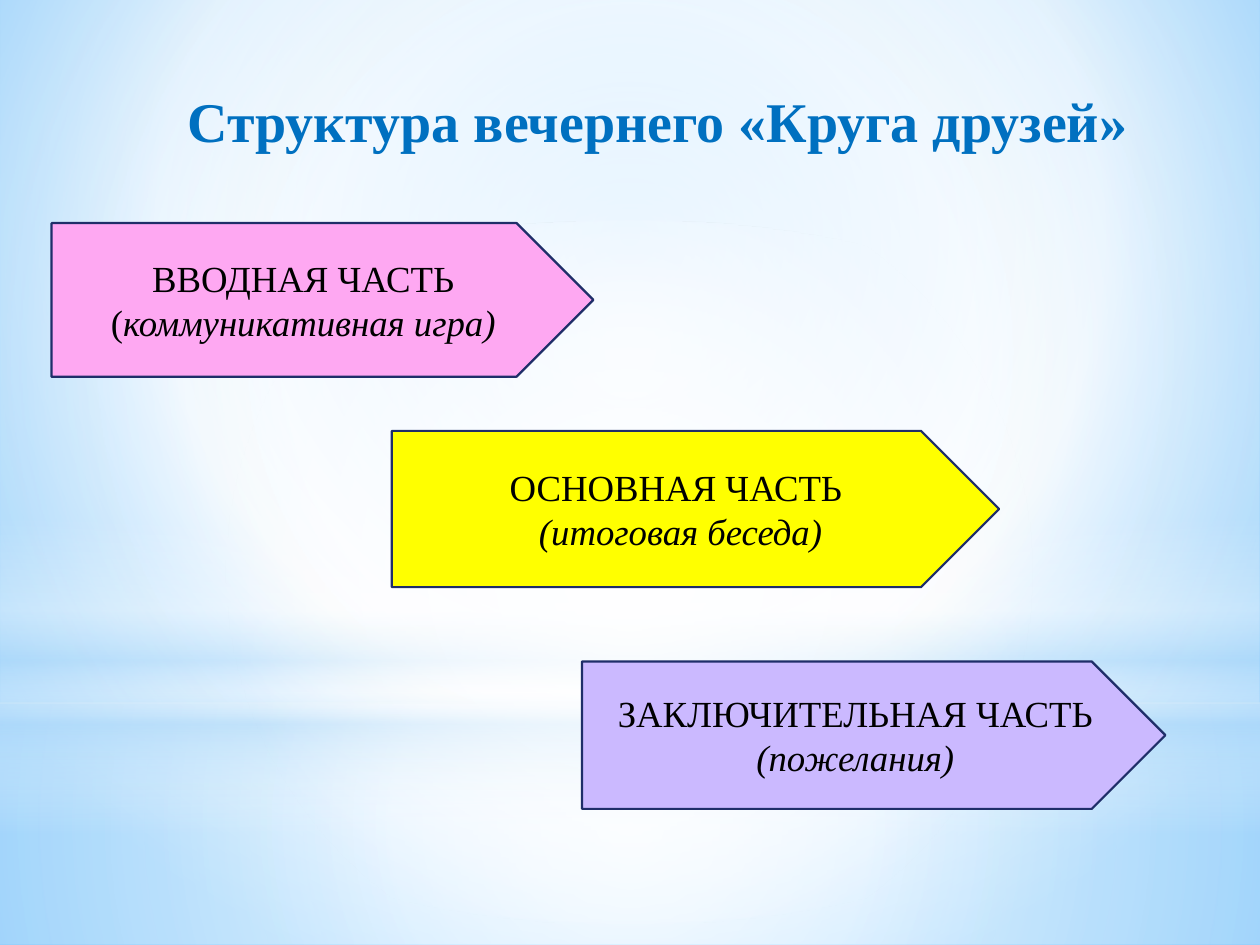
from pptx import Presentation
from pptx.dml.color import RGBColor
from pptx.enum.shapes import MSO_SHAPE
from pptx.enum.text import MSO_ANCHOR, PP_ALIGN
from pptx.oxml import parse_xml
from pptx.oxml.ns import nsdecls, qn
from pptx.util import Inches, Pt

RECT, OVAL, ARROW = MSO_SHAPE.RECTANGLE, MSO_SHAPE.OVAL, MSO_SHAPE.PENTAGON
CENTER = PP_ALIGN.CENTER
MIDDLE, TOP = MSO_ANCHOR.MIDDLE, MSO_ANCHOR.TOP

FONT = "Times New Roman"
BLACK = RGBColor(0x00, 0x00, 0x00)
BLUE = RGBColor(0x00, 0x70, 0xC0)
NAVY = RGBColor(0x1F, 0x2E, 0x69)
PINK = RGBColor(0xFE, 0xA8, 0xF2)
YELLOW = RGBColor(0xFF, 0xFF, 0x00)
LILAC = RGBColor(0xCB, 0xB9, 0xFF)
WHITE = RGBColor(0xFF, 0xFF, 0xFF)
PALE = RGBColor(0xB4, 0xDC, 0xFA)
SKY = RGBColor(0x9E, 0xD5, 0xFF)
AZURE = RGBColor(0x5B, 0xB9, 0xFF)


def set_gradient(props, stops, focus=None):
    """Swap the solid fill in props for a gradient of (position, colour, opacity)
    stops: circular around focus (left, top, right, bottom), else downward."""
    gs = "".join(
        f'<a:gs pos="{pos * 1000}"><a:srgbClr val="{color}">'
        f'<a:alpha val="{opacity * 1000}"/></a:srgbClr></a:gs>'
        for pos, color, opacity in stops
    )
    if focus:
        l, t, r, b = (edge * 1000 for edge in focus)
        shade = (f'<a:path path="circle"><a:fillToRect l="{l}" t="{t}" '
                 f'r="{r}" b="{b}"/></a:path>')
    else:
        shade = '<a:lin ang="5400000" scaled="0"/>'
    grad = parse_xml(f'<a:gradFill {nsdecls("a")} rotWithShape="1">'
                     f'<a:gsLst>{gs}</a:gsLst>{shade}</a:gradFill>')
    props.replace(props.find(qn("a:solidFill")), grad)


def add_run(p, text, size=21, color=BLACK, bold=False, italic=False):
    p.alignment = CENTER
    r = p.add_run()
    r.text = text
    r.font.name = FONT
    r.font.size = Pt(size)
    r.font.color.rgb = color
    r.font.bold = bold
    r.font.italic = italic


prs = Presentation()
prs.slide_width, prs.slide_height = Inches(10), Inches(7.5)
s = prs.slides.add_slide(prs.slide_layouts[6])

# Background and its soft light layers
s.background.fill.solid()
set_gradient(s.element.find(f".//{qn('p:bgPr')}"),
             [(0, SKY, 100), (60, WHITE, 100), (100, AZURE, 100)], (20, 10, 20, 60))

MID = (50, 50, 50, 50)
layers = [
    (RECT, 5.58, 1.92, [(0, WHITE, 91), (37, WHITE, 76), (100, PALE, 79)], MID),
    (RECT, 0, 5.58, [(0, WHITE, 89), (48, WHITE, 62), (100, PALE, 79)], MID),
    (RECT, 4.12, 2.5, [(0, WHITE, 0), (29, WHITE, 30), (45, PALE, 40),
                       (55, WHITE, 26), (65, PALE, 60), (100, WHITE, 0)], None),
    (OVAL, 1.75, 5.58, [(0, WHITE, 100), (56, WHITE, 0)], MID),
]
for kind, top, height, stops, focus in layers:
    sp = s.shapes.add_shape(kind, 0, Inches(top), prs.slide_width, Inches(height))
    sp.shadow.inherit = False
    sp.line.fill.background()
    sp.fill.solid()
    set_gradient(sp.element.spPr, stops, focus)

# Parts of the circle: heading, then runs of (text, italic)
parts = [
    (0.41, 1.77, 4.3, 1.22, PINK, "ВВОДНАЯ ЧАСТЬ",
     [("(", False), ("коммуникативная игра)", True)]),
    (3.11, 3.42, 4.82, 1.24, YELLOW, "ОСНОВНАЯ ЧАСТЬ",
     [(" ", False), ("(итоговая беседа)", True)]),
    (4.62, 5.25, 4.63, 1.17, LILAC, "ЗАКЛЮЧИТЕЛЬНАЯ ЧАСТЬ",
     [("(пожелания)", True)]),
]
for left, top, width, height, color, heading, details in parts:
    sp = s.shapes.add_shape(ARROW, Inches(left), Inches(top),
                            Inches(width), Inches(height))
    sp.shadow.inherit = False
    sp.fill.solid()
    sp.fill.fore_color.rgb = color
    sp.line.color.rgb = NAVY
    sp.line.width = Pt(1.25)
    tf = sp.text_frame
    tf.word_wrap = True
    tf.vertical_anchor = MIDDLE
    add_run(tf.paragraphs[0], heading)
    p = tf.add_paragraph()
    for text, italic in details:
        add_run(p, text, italic=italic)

# Title
tf = s.shapes.add_textbox(Inches(1.18), Inches(0.6), Inches(8.08), Inches(1.17)).text_frame
tf.word_wrap = True
tf.vertical_anchor = TOP
p = tf.paragraphs[0]
p.line_spacing = 1.07
add_run(p, "Структура вечернего «Круга друзей»", size=32, color=BLUE, bold=True)

prs.save("out.pptx")
